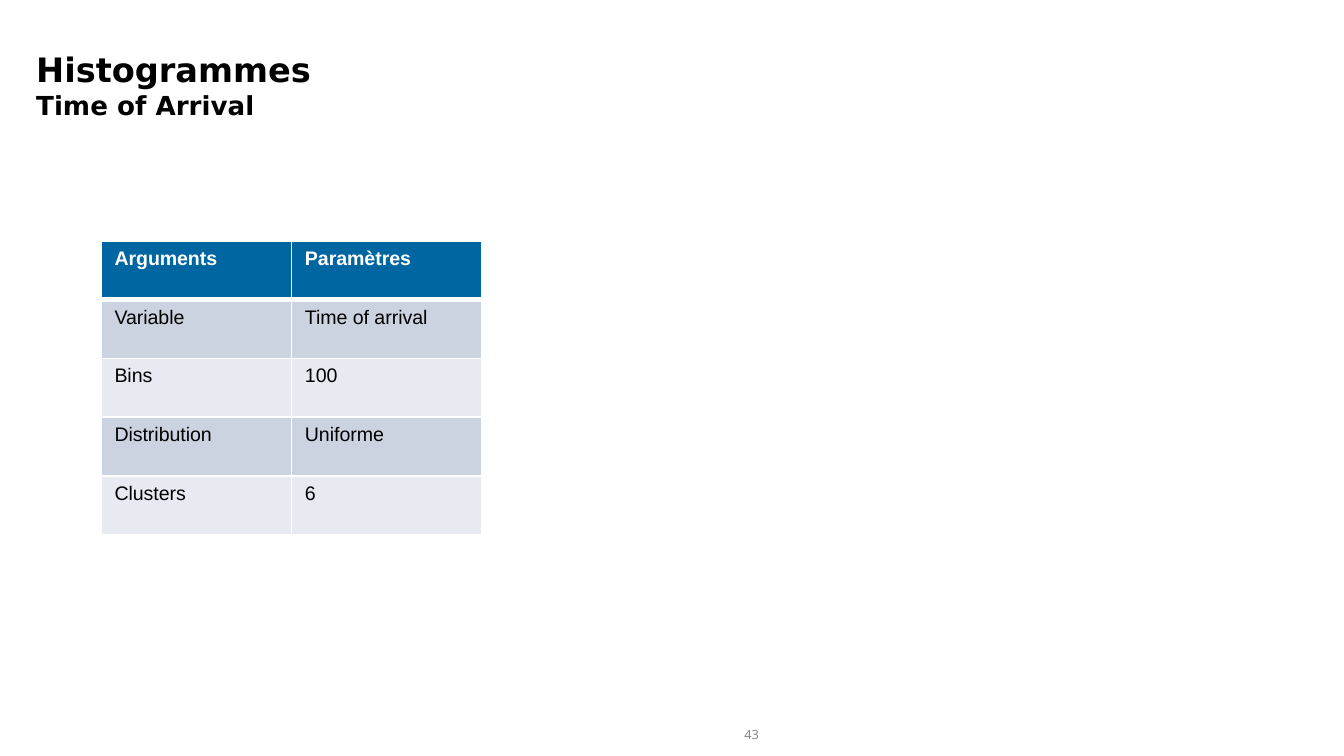
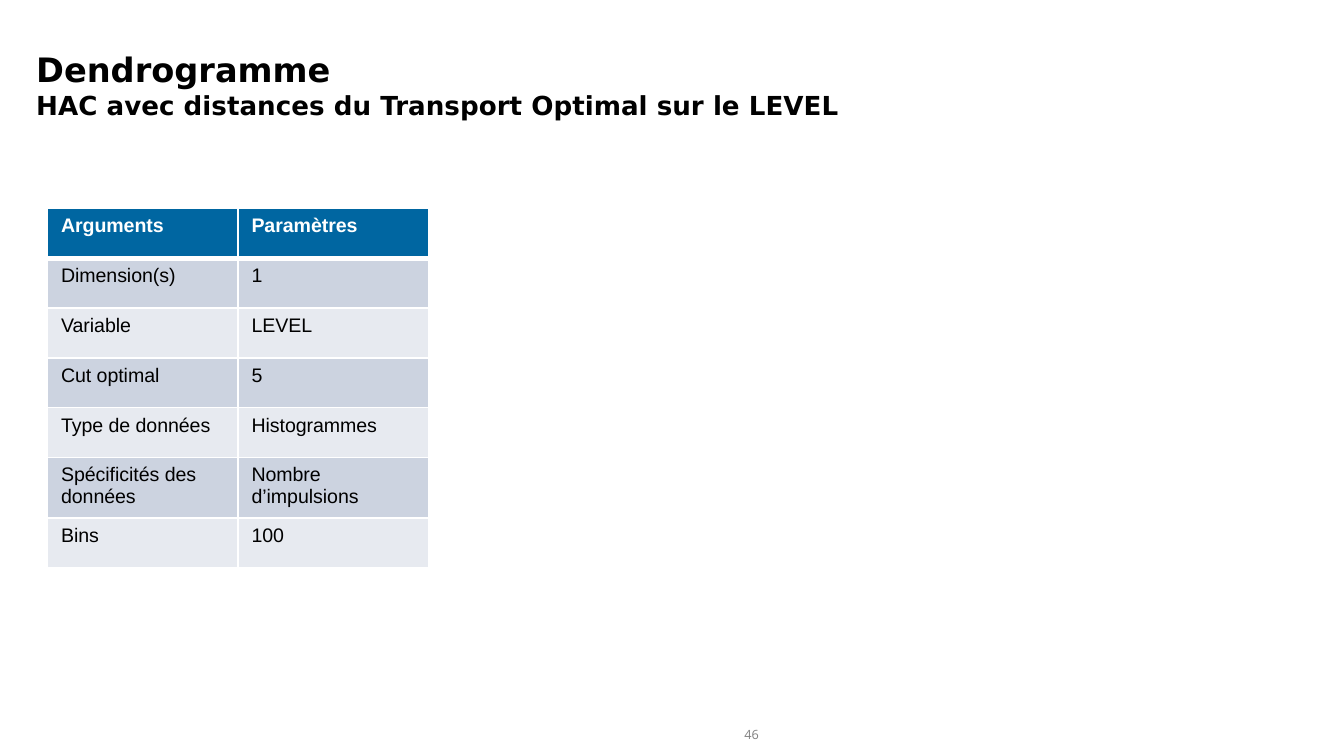
from dataclasses import dataclass

from lxml import etree
from pptx import Presentation
from pptx.dml.color import RGBColor
from pptx.enum import text
from pptx.oxml import ns
from pptx.util import Cm, Pt


@dataclass(frozen=True)
class Theme:
    """Colours, fonts and type sizes shared by the slides."""
    ink: str = "000000"
    white: str = "FFFFFF"
    header: str = "0066A1"
    bands: tuple = ("CCD3E0", "E7EAF0")
    muted: str = "818181"
    title_font: str = "DejaVu Sans"
    table_font: str = "Arial"
    number_font: str = "Open Sans"
    title_size: float = 18
    subtitle_size: float = 14
    table_size: float = 10.5
    number_size: float = 6.8
    rule: float = 1
    header_rule: float = 3


THEME = Theme()


def style_font(font, name, size, colour, bold=False):
    """Apply a typeface, size, colour and weight."""
    font.name, font.size, font.bold = name, Pt(size), bold
    font.color.rgb = RGBColor.from_string(colour)


def add_title(slide, heading, subtitle, width):
    """Place the heading with its smaller second line."""
    title = slide.shapes.title
    title.left, title.top = Cm(0.43), Cm(0.79)
    title.width, title.height = Cm(width), Cm(1.57)
    frame = title.text_frame
    frame.word_wrap = True
    frame.auto_size = text.MSO_AUTO_SIZE.NONE
    frame.vertical_anchor = text.MSO_ANCHOR.TOP
    frame.text = f"{heading}\v{subtitle}"
    line = frame.paragraphs[0]
    line.alignment = text.PP_ALIGN.LEFT
    style_font(line.font, THEME.title_font, THEME.title_size, THEME.ink, True)
    line.runs[1].font.size = Pt(THEME.subtitle_size)


def add_page_number(slide, number):
    """Write the page number at the foot of the slide."""
    footer = slide.shapes.add_textbox(Cm(13.34), Cm(13.61), Cm(1.73), Cm(0.51))
    frame = footer.text_frame
    frame.word_wrap = True
    frame.vertical_anchor = text.MSO_ANCHOR.MIDDLE
    frame.margin_left = frame.margin_right = Cm(0.2)
    frame.margin_top = frame.margin_bottom = Cm(0.1)
    frame.text = str(number)
    line = frame.paragraphs[0]
    line.alignment = text.PP_ALIGN.CENTER
    style_font(line.font, THEME.number_font, THEME.number_size, THEME.muted)


def set_borders(cell, top, bottom):
    """Draw white borders with the given top and bottom widths."""
    properties = cell._tc.get_or_add_tcPr()
    widths = {"L": THEME.rule, "R": THEME.rule, "T": top, "B": bottom}
    for position, (side, width) in enumerate(widths.items()):
        border = etree.Element(ns.qn(f"a:ln{side}"), w=str(Pt(width)))
        fill = etree.SubElement(border, ns.qn("a:solidFill"))
        etree.SubElement(fill, ns.qn("a:srgbClr"), val=THEME.white)
        properties.insert(position, border)


def fill_cell(cell, wording, row):
    """Write and format one cell according to its row."""
    is_header = row == 0
    cell.text = wording
    cell.fill.solid()
    fill = THEME.header if is_header else THEME.bands[(row - 1) % 2]
    cell.fill.fore_color.rgb = RGBColor.from_string(fill)
    colour = THEME.white if is_header else THEME.ink
    style_font(cell.text_frame.paragraphs[0].font, THEME.table_font,
               THEME.table_size, colour, is_header)
    set_borders(cell, THEME.header_rule if row == 1 else THEME.rule,
                THEME.header_rule if is_header else THEME.rule)


def add_parameters(slide, left, top, row_height, settings):
    """Add the table of arguments and their values."""
    rows = [("Arguments", "Paramètres"), *settings]
    table = slide.shapes.add_table(len(rows), 2, Cm(left), Cm(top), Cm(7.2),
                                   Cm(row_height * len(rows))).table
    for row, wordings in enumerate(rows):
        table.rows[row].height = Cm(row_height)
        for column, wording in enumerate(wordings):
            fill_cell(table.cell(row, column), wording, row)


def add_page(deck, number, heading, subtitle, title_width):
    """Add a slide with its title and page number."""
    slide = deck.slides.add_slide(deck.slide_layouts[5])
    add_page_number(slide, number)
    add_title(slide, heading, subtitle, title_width)
    return slide


def main():
    """Build and save both slides."""
    deck = Presentation()
    deck.slide_width, deck.slide_height = Cm(25.4), Cm(14.28)

    histograms = add_page(deck, 43, "Histogrammes", "Time of Arrival", 14.88)
    add_parameters(histograms, 1.91, 4.55, 1.11, [
        ("Variable", "Time of arrival"),
        ("Bins", "100"),
        ("Distribution", "Uniforme"),
        ("Clusters", "6"),
    ])

    dendrogram = add_page(
        deck, 46, "Dendrogramme",
        "HAC avec distances du Transport Optimal sur le LEVEL", 19.28)
    add_parameters(dendrogram, 0.9, 3.94, 0.94, [
        ("Dimension(s)", "1"),
        ("Variable", "LEVEL"),
        ("Cut optimal", "5"),
        ("Type de données", "Histogrammes"),
        ("Spécificités des données", "Nombre d’impulsions"),
        ("Bins", "100"),
    ])

    deck.save("out.pptx")


if __name__ == "__main__":
    main()
